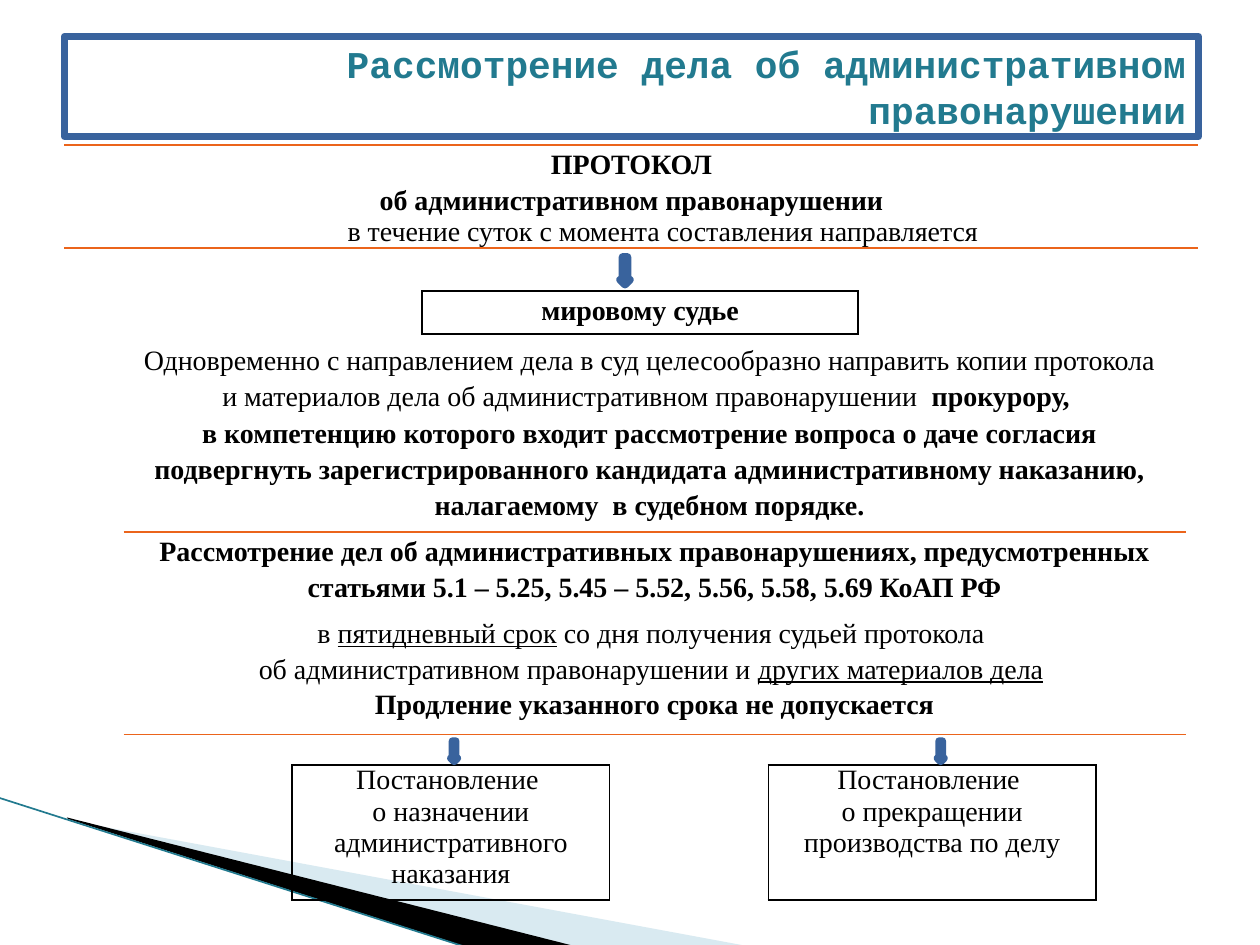
from dataclasses import dataclass

import pptx
import pptx.dml.color
import pptx.enum.shapes
import pptx.enum.text
import pptx.oxml
import pptx.oxml.ns
import pptx.util

Cm = pptx.util.Cm
Pt = pptx.util.Pt
RGBColor = pptx.dml.color.RGBColor
MSO_SHAPE = pptx.enum.shapes.MSO_SHAPE
PP_ALIGN = pptx.enum.text.PP_ALIGN

BLACK = RGBColor(0x00, 0x00, 0x00)
WHITE = RGBColor(0xFF, 0xFF, 0xFF)
BLUE = RGBColor(0x39, 0x63, 0x9D)
TEAL = RGBColor(0x22, 0x7A, 0x8F)
PALE_BLUE = RGBColor(0xA0, 0xCB, 0xDC)
ORANGE = RGBColor(0xEB, 0x64, 0x1B)
BODY_FONT = "Times New Roman"
SIDES = {"l": "a:lnL", "r": "a:lnR", "t": "a:lnT", "b": "a:lnB"}


@dataclass(frozen=True)
class Piece:
    text: str
    bold: bool = False
    underline: bool = False


@dataclass(frozen=True)
class Line:
    pieces: tuple[Piece, ...]
    spacing: float = 1.0
    indent: float = 0


@dataclass(frozen=True)
class CellText:
    lines: tuple[Line, ...]
    borders: str = ""


@dataclass(frozen=True)
class Grid:
    left: float
    top: float
    columns: tuple[float, ...]
    rows: tuple[float, ...]
    cells: tuple[CellText, ...]
    border_color: RGBColor
    inset: float = 0.13


@dataclass(frozen=True)
class Arrow:
    left: float
    top: float
    width: float
    height: float


@dataclass(frozen=True)
class Wedge:
    points: tuple[tuple[float, float], ...]
    color: RGBColor
    opacity: int = 100


def line(text: str, bold: bool = False, spacing: float = 1.0, indent: float = 0) -> Line:
    return Line((Piece(text, bold),), spacing, indent)


def add_xml(parent, tag: str, **attributes: str):
    element = pptx.oxml.parse_xml(f"<{tag} {pptx.oxml.ns.nsdecls('a')}/>")
    for name, value in attributes.items():
        element.set(name, value)
    parent.append(element)
    return element


def write_lines(text_frame, lines: tuple[Line, ...]) -> None:
    for index, entry in enumerate(lines):
        paragraph = text_frame.add_paragraph() if index else text_frame.paragraphs[0]
        paragraph.alignment = PP_ALIGN.CENTER
        paragraph.line_spacing = entry.spacing
        if entry.indent:
            properties = paragraph._p.get_or_add_pPr()
            properties.set("marL", "0")
            properties.set("indent", str(Cm(entry.indent)))
        paragraph.font.name = BODY_FONT
        paragraph.font.size = Pt(16)
        paragraph.font.color.rgb = BLACK
        uniform_bold = len({piece.bold for piece in entry.pieces}) == 1
        if uniform_bold:
            paragraph.font.bold = entry.pieces[0].bold
        for piece in entry.pieces:
            for part_index, part in enumerate(piece.text.split("\n")):
                if part_index:
                    paragraph.add_line_break()
                run = paragraph.add_run()
                run.text = part
                if not uniform_bold:
                    run.font.bold = piece.bold
                if piece.underline:
                    run.font.underline = True


def set_borders(cell, sides: str, color: RGBColor) -> None:
    properties = cell._tc.get_or_add_tcPr()
    for side, tag in SIDES.items():
        border = add_xml(properties, tag, w=str(Pt(1)))
        if side in sides:
            add_xml(add_xml(border, "a:solidFill"), "a:srgbClr", val=str(color))
        else:
            add_xml(border, "a:noFill")


def draw_grid(slide, grid: Grid) -> None:
    table = slide.shapes.add_table(
        len(grid.rows), len(grid.columns), Cm(grid.left), Cm(grid.top),
        Cm(sum(grid.columns)), Cm(sum(grid.rows))).table
    table.first_row = False
    table.horz_banding = False
    for column, width in zip(table.columns, grid.columns):
        column.width = Cm(width)
    for row, height in zip(table.rows, grid.rows):
        row.height = Cm(height)
    for cell, content in zip(table.iter_cells(), grid.cells):
        cell.margin_left = cell.margin_right = Cm(grid.inset)
        cell.margin_top = cell.margin_bottom = 0
        set_borders(cell, content.borders, grid.border_color)
        cell.fill.background()
        write_lines(cell.text_frame, content.lines)


def draw_outlined(slide, kind, left: float, top: float, width: float, height: float):
    shape = slide.shapes.add_shape(kind, Cm(left), Cm(top), Cm(width), Cm(height))
    shape.shadow.inherit = False
    shape.fill.solid()
    shape.fill.fore_color.rgb = WHITE
    shape.line.color.rgb = BLUE
    shape.line.width = Pt(4.33)
    add_xml(shape.line._get_or_add_ln(), "a:round")
    return shape


def draw_title(slide, text: str) -> None:
    shape = draw_outlined(slide, MSO_SHAPE.RECTANGLE, 1.3, 0.74, 22.86, 2.01)
    shape.text_frame.word_wrap = True
    shape.text_frame.vertical_anchor = pptx.enum.text.MSO_ANCHOR.MIDDLE
    paragraph = shape.text_frame.paragraphs[0]
    paragraph.text = text
    paragraph.alignment = PP_ALIGN.RIGHT
    paragraph.font.name = "Courier New"
    paragraph.font.size = Pt(21.6)
    paragraph.font.bold = True
    paragraph.font.color.rgb = TEAL


def draw_wedge(slide, wedge: Wedge) -> None:
    points = [(Cm(x), Cm(y)) for x, y in wedge.points]
    builder = slide.shapes.build_freeform(*points[0])
    builder.add_line_segments(points[1:], close=True)
    shape = builder.convert_to_shape()
    shape.shadow.inherit = False
    shape.fill.solid()
    shape.fill.fore_color.rgb = wedge.color
    shape.line.fill.background()
    if wedge.opacity < 100:
        color = shape._element.spPr.find(".//" + pptx.oxml.ns.qn("a:srgbClr"))
        add_xml(color, "a:alpha", val=str(wedge.opacity * 1000))


def draw_corner_line(slide) -> None:
    connector = slide.shapes.add_connector(
        pptx.enum.shapes.MSO_CONNECTOR.STRAIGHT, Cm(-0.03), Cm(16.08), Cm(9.42), Cm(19.1))
    connector.line.color.rgb = TEAL
    connector.line.width = Pt(0.95)
    add_xml(connector._element.spPr, "a:effectLst")


def draw_note(slide, entry: Line) -> None:
    box = slide.shapes.add_textbox(Cm(2.49), Cm(6.73), Cm(21.21), Cm(3.68))
    box.text_frame.word_wrap = True
    box.text_frame.auto_size = pptx.enum.text.MSO_AUTO_SIZE.SHAPE_TO_FIT_TEXT
    write_lines(box.text_frame, (entry,))


WEDGES = (
    Wedge(((1.4, 16.54), (15.11, 19.08), (11.58, 19.08), (1.4, 16.51)), PALE_BLUE, 40),
    Wedge(((1.35, 16.48), (11.61, 19.08), (9.45, 19.1), (1.37, 16.51)), BLACK),
)
PROTOCOL = Grid(1.3, 2.92, (22.86,), (1.45, 0.63), (
    CellText((line("ПРОТОКОЛ", True, 1.15),
              line("об административном правонарушении", True, 1.15)), "t"),
    CellText((line("в течение суток с момента составления направляется", indent=1.27),), "b"),
), ORANGE, 0.15)
JUDGE = Grid(8.51, 5.87, (8.79,), (0.86,), (
    CellText((line("мировому судье", True, 1.15),), "lrtb"),), BLACK)
NOTE = Line((
    Piece("Одновременно с направлением дела в суд целесообразно направить копии протокола "
          "и материалов дела об административном правонарушении  "),
    Piece("прокурору, \nв компетенцию которого входит рассмотрение вопроса о даче согласия "
          "подвергнуть зарегистрированного кандидата административному наказанию, "
          "налагаемому  в судебном порядке.", True)), 1.08)
REVIEW = Grid(2.49, 10.72, (21.41,), (1.65, 2.44), (
    CellText((line("Рассмотрение дел об административных правонарушениях, предусмотренных "
                   "статьями 5.1 – 5.25, 5.45 – 5.52, 5.56, 5.58, 5.69 КоАП РФ", True, 1.15),), "t"),
    CellText((
        Line((Piece("в "), Piece("пятидневный срок", underline=True),
              Piece(" со дня получения судьей протокола ")), 1.15),
        Line((Piece("об административном правонарушении и "),
              Piece("других материалов дела", underline=True), Piece(" ")), 1.15),
        line("Продление указанного срока не допускается", True, 1.15)), "b"),
), ORANGE)
RULINGS = Grid(5.89, 15.42, (6.4, 3.2, 6.6), (2.72,), (
    CellText((line("Постановление \nо назначении"), line("административного наказания")), "lrtb"),
    CellText((), "lr"),
    CellText((line("Постановление \nо прекращении"), line("производства по делу")), "lrtb"),
), BLACK)
ARROWS = (
    Arrow(9.09, 14.94, 0.13, 0.41),
    Arrow(18.9, 14.94, 0.13, 0.41),
    Arrow(12.5, 5.18, 0.2, 0.56),
)


def main() -> None:
    presentation = pptx.Presentation()
    presentation.slide_width = Cm(25.4)
    presentation.slide_height = Cm(19.05)
    slide = presentation.slides.add_slide(presentation.slide_layouts[6])
    for wedge in WEDGES:
        draw_wedge(slide, wedge)
    draw_corner_line(slide)
    draw_grid(slide, PROTOCOL)
    draw_title(slide, "Рассмотрение дела об административном правонарушении")
    draw_grid(slide, JUDGE)
    draw_note(slide, NOTE)
    for grid in (REVIEW, RULINGS):
        draw_grid(slide, grid)
    for arrow in ARROWS:
        draw_outlined(slide, MSO_SHAPE.DOWN_ARROW, arrow.left, arrow.top, arrow.width, arrow.height)
    presentation.save("out.pptx")


if __name__ == "__main__":
    main()
